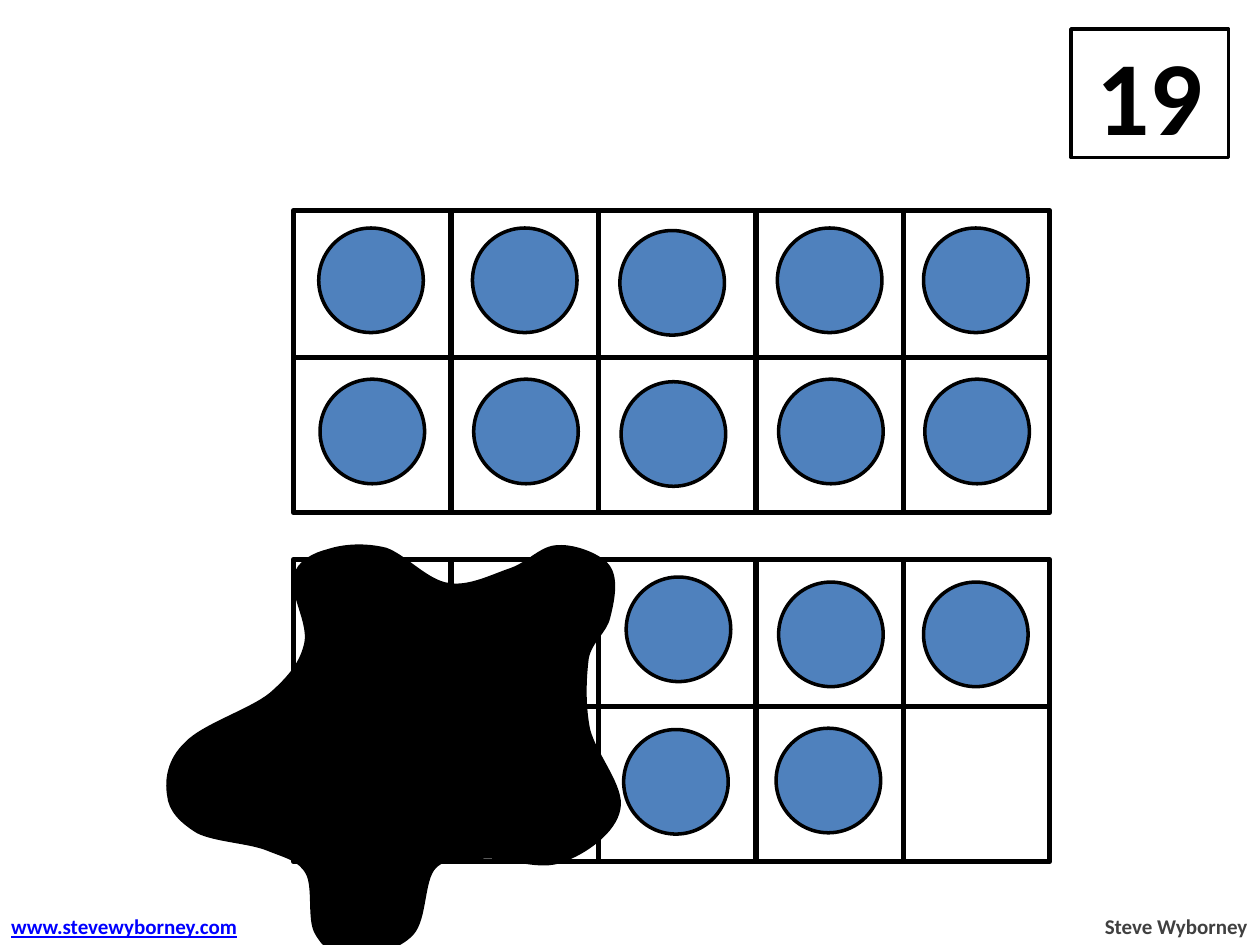
from dataclasses import dataclass

from lxml import etree
from pptx import Presentation
from pptx.dml.color import RGBColor
from pptx.enum.shapes import MSO_CONNECTOR, MSO_SHAPE
from pptx.enum.text import MSO_ANCHOR, MSO_AUTO_SIZE, PP_ALIGN
from pptx.oxml.ns import qn
from pptx.util import Inches, Pt

RECTANGLE, OVAL = MSO_SHAPE.RECTANGLE, MSO_SHAPE.OVAL
STRAIGHT = MSO_CONNECTOR.STRAIGHT
LEFT, CENTER, RIGHT = PP_ALIGN.LEFT, PP_ALIGN.CENTER, PP_ALIGN.RIGHT
MIDDLE = MSO_ANCHOR.MIDDLE
FIT_TEXT = MSO_AUTO_SIZE.SHAPE_TO_FIT_TEXT


@dataclass(frozen=True)
class Theme:
    font: str = "Calibri"
    ink: RGBColor = RGBColor(0, 0, 0)
    paper: RGBColor = RGBColor(255, 255, 255)
    counter: RGBColor = RGBColor(0x4F, 0x81, 0xBD)
    credit: RGBColor = RGBColor(0x40, 0x40, 0x40)
    link: RGBColor = RGBColor(0, 0, 255)
    number_size: int = 60
    footer_size: int = 12
    outline: int = 2
    grid: int = 3


@dataclass(frozen=True)
class TenFrame:
    top: float
    counters: tuple[tuple[float, float], ...]
    left: float = 2.33
    width: float = 6
    height: float = 2.4
    divider_offsets: tuple[float, ...] = (1.25, 2.42, 3.67, 4.84)
    middle_offset: float = 1.17
    middle_shift: float = 0.02


@dataclass(frozen=True)
class Footer:
    text: str
    left: float
    width: float
    alignment: PP_ALIGN
    color: RGBColor
    underline: bool = False


THEME = Theme()
COUNTER_SIZE = 0.83

# The second row of the full frame repeats the first, a step lower
FIRST_ROW = ((2.53, 1.81), (3.75, 1.81), (4.92, 1.83), (6.17, 1.81), (7.33, 1.81))
SECOND_ROW = tuple((left + 0.01, top + 1.2) for left, top in FIRST_ROW)
FULL_FRAME = TenFrame(1.67, FIRST_ROW + SECOND_ROW)
PARTIAL_FRAME = TenFrame(4.44, (
    (2.53, 4.6), (3.74, 4.62), (4.97, 4.58), (6.18, 4.62), (7.33, 4.62),
    (2.53, 5.79), (3.76, 5.79), (4.95, 5.79), (6.16, 5.78)))

AUTHOR = Footer("Steve Wyborney", 8.66, 1.34, RIGHT, THEME.credit)
WEBSITE = Footer("www.stevewyborney.com", -0.01, 2.05, LEFT, THEME.link, True)

# Each curve of the splat: two control points and an end point
SPLAT_START = (1.57, 6.6)
SPLAT_CURVES = (
    (1.44, 6.52, 1.35, 6.43, 1.34, 6.31), (1.32, 6.19, 1.34, 6.03, 1.48, 5.9),
    (1.61, 5.76, 1.99, 5.64, 2.15, 5.51), (2.31, 5.37, 2.4, 5.25, 2.43, 5.1),
    (2.46, 4.94, 2.31, 4.7, 2.34, 4.58), (2.37, 4.46, 2.49, 4.4, 2.61, 4.37),
    (2.73, 4.33, 2.9, 4.32, 3.06, 4.36), (3.21, 4.41, 3.39, 4.62, 3.56, 4.64),
    (3.72, 4.67, 3.91, 4.57, 4.06, 4.52), (4.2, 4.47, 4.3, 4.34, 4.43, 4.34),
    (4.56, 4.33, 4.77, 4.41, 4.83, 4.5), (4.9, 4.6, 4.86, 4.78, 4.83, 4.9),
    (4.8, 5.02, 4.69, 5.08, 4.66, 5.22), (4.64, 5.37, 4.63, 5.59, 4.67, 5.79),
    (4.72, 5.99, 4.95, 6.25, 4.91, 6.42), (4.88, 6.6, 4.64, 6.77, 4.46, 6.83),
    (4.29, 6.9, 4.04, 6.8, 3.87, 6.8), (3.71, 6.81, 3.55, 6.78, 3.45, 6.88),
    (3.35, 6.98, 3.38, 7.29, 3.27, 7.41), (3.16, 7.53, 2.92, 7.59, 2.79, 7.59),
    (2.66, 7.59, 2.57, 7.51, 2.51, 7.4), (2.45, 7.29, 2.5, 7.04, 2.44, 6.93),
    (2.38, 6.82, 2.28, 6.8, 2.13, 6.74), (1.99, 6.68, 1.71, 6.67, 1.57, 6.6),
)


def style_shape(shape, fill: RGBColor | None, line_width: float) -> None:
    shape.shadow.inherit = False
    if fill is None:
        shape.fill.background()
    else:
        shape.fill.solid()
        shape.fill.fore_color.rgb = fill
    shape.line.color.rgb = THEME.ink
    shape.line.width = Pt(line_width)


def add_shape(shapes, kind, left: float, top: float, width: float, height: float,
              fill: RGBColor | None, line_width: float):
    shape = shapes.add_shape(kind, Inches(left), Inches(top), Inches(width), Inches(height))
    style_shape(shape, fill, line_width)
    return shape


def add_divider(shapes, start: tuple[float, float], end: tuple[float, float]) -> None:
    divider = shapes.add_connector(STRAIGHT, *(Inches(value) for value in start + end))
    divider.line.color.rgb = THEME.ink
    divider.line.width = Pt(THEME.grid)
    etree.SubElement(divider._element.spPr, qn("a:effectLst"))


def write_text(shape, text: str, size: int, color: RGBColor, alignment,
               underline: bool = False) -> None:
    paragraph = shape.text_frame.paragraphs[0]
    paragraph.alignment = alignment
    run = paragraph.add_run()
    run.text = text
    formats = {"name": THEME.font, "size": Pt(size), "bold": True, "underline": underline}
    for attribute, value in formats.items():
        setattr(run.font, attribute, value)
    run.font.color.rgb = color


def draw_counters(shapes, frame: TenFrame) -> None:
    for left, top in frame.counters:
        add_shape(shapes, OVAL, left, top, COUNTER_SIZE, COUNTER_SIZE,
                  THEME.counter, THEME.outline)


def draw_grid(shapes, frame: TenFrame) -> None:
    add_shape(shapes, RECTANGLE, frame.left, frame.top, frame.width, frame.height,
              None, THEME.grid)
    for offset in frame.divider_offsets:
        x = frame.left + offset
        add_divider(shapes, (x, frame.top), (x, frame.top + frame.height))
    x, y = frame.left + frame.middle_shift, frame.top + frame.middle_offset
    add_divider(shapes, (x, y), (x + frame.width, y))


def draw_splat(slide) -> None:
    builder = slide.shapes.build_freeform(*(Inches(value) for value in SPLAT_START))
    builder.add_line_segments([(Inches(curve[4]), Inches(curve[5])) for curve in SPLAT_CURVES])
    splat = builder.convert_to_shape()
    style_shape(splat, THEME.ink, THEME.outline)
    # Turn the straight segments into Bézier curves
    segments = list(splat._element.iter(qn("a:lnTo")))
    for segment, curve in zip(segments, SPLAT_CURVES):
        bezier = etree.Element(qn("a:cubicBezTo"))
        for x, y in zip(curve[::2], curve[1::2]):
            etree.SubElement(bezier, qn("a:pt"), x=str(Inches(x) - splat.left),
                             y=str(Inches(y) - splat.top))
        segment.getparent().replace(segment, bezier)


def draw_footer(slide, footer: Footer) -> None:
    box = slide.shapes.add_textbox(Inches(footer.left), Inches(7.2),
                                   Inches(footer.width), Inches(0.3))
    box.text_frame.word_wrap = False
    box.text_frame.auto_size = FIT_TEXT
    write_text(box, footer.text, THEME.footer_size, footer.color,
               footer.alignment, footer.underline)


def main() -> None:
    presentation = Presentation()
    presentation.slide_width, presentation.slide_height = Inches(10), Inches(7.5)
    slide = presentation.slides.add_slide(presentation.slide_layouts[6])

    # Counters of the second frame
    draw_counters(slide.shapes, PARTIAL_FRAME)
    draw_footer(slide, AUTHOR)

    # Total in the corner
    number_box = add_shape(slide.shapes, RECTANGLE, 8.5, 0.23, 1.25, 1.02,
                           THEME.paper, THEME.outline)
    number_box.text_frame.vertical_anchor = MIDDLE
    write_text(number_box, "19", THEME.number_size, THEME.ink, CENTER)

    # Splat over part of the second frame
    draw_splat(slide)
    draw_footer(slide, WEBSITE)
    draw_grid(slide.shapes.add_group_shape().shapes, PARTIAL_FRAME)

    # Full frame
    full_shapes = slide.shapes.add_group_shape().shapes
    draw_counters(full_shapes, FULL_FRAME)
    draw_grid(full_shapes, FULL_FRAME)

    presentation.save("out.pptx")


if __name__ == "__main__":
    main()
